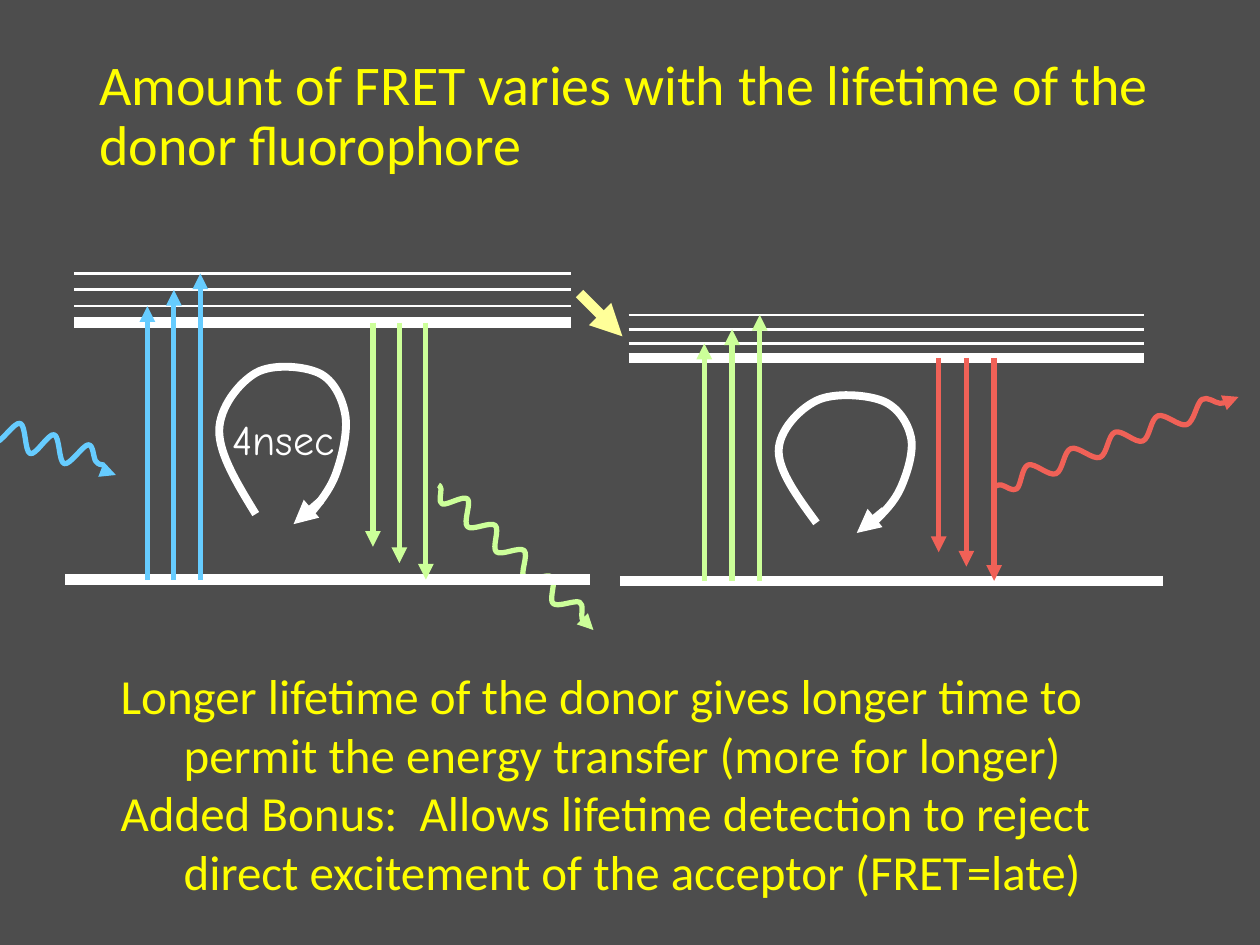
import pptx
import pptx.util
import pptx.dml.color
import pptx.enum.shapes
import pptx.enum.text
import pptx.oxml.ns
from dataclasses import dataclass
from typing import Optional
from lxml import etree

Point = tuple[float, float]
Anchor = pptx.enum.text.MSO_ANCHOR
Align = pptx.enum.text.PP_ALIGN
qn = pptx.oxml.ns.qn


@dataclass(frozen=True)
class Theme:
    back: str = "4D4D4D"
    white: str = "FFFFFF"
    text: str = "FFFF00"
    blue: str = "66CCFF"
    green: str = "CCFF99"
    red: str = "F06157"
    cream: str = "FFFF99"
    font: str = "Calibri"
    hand: str = "Comic Neue"
    title: float = 32
    body: float = 28
    label: float = 24
    thin: float = 1.5
    ray: float = 3
    loop: float = 4.5
    thick: float = 6


@dataclass(frozen=True)
class Scheme:
    ground: tuple[float, float, float]
    band: tuple[float, float]
    low: float
    top: float
    rise: float
    fall: float
    pitch: float
    up: str
    down: str


@dataclass(frozen=True)
class Curve:
    points: list[Point]
    tip: tuple[Point, Point]
    tint: str
    width: float


@dataclass(frozen=True)
class Label:
    box: tuple[float, float, float, float]
    lines: list[str]
    size: float
    font: str
    tint: str
    hang: float = 0
    space: Optional[float] = None
    centre: bool = False


THEME = Theme()

DONOR = Scheme((0.52, 4.68, 4.6), (0.59, 4.53), 2.56, 2.17, 1.17, 2.96, 0.21, THEME.blue, THEME.green)
TAKER = Scheme((4.92, 9.23, 4.61), (4.99, 9.08), 2.84, 2.5, 5.59, 7.45, 0.22, THEME.green, THEME.red)

GREEN_WAVE = Curve(
    [(3.48, 3.85), (3.5, 3.88), (3.51, 4), (3.71, 3.96), (3.71, 4.18), (3.93, 4.17), (3.94, 4.38),
     (4.16, 4.37), (4.16, 4.59), (4.38, 4.58), (4.39, 4.79), (4.6, 4.78), (4.62, 4.91), (4.67, 4.96)],
    ((4.65, 4.94), (4.71, 5)), THEME.green, THEME.ray)
BLUE_WAVE = Curve(
    [(-0.63, 3.22), (-0.6, 3.24), (-0.55, 3.36), (-0.38, 3.2), (-0.31, 3.43), (-0.11, 3.28),
     (-0.04, 3.51), (0.16, 3.36), (0.24, 3.6), (0.43, 3.45), (0.51, 3.68), (0.7, 3.53),
     (0.76, 3.66), (0.82, 3.69)],
    ((0.84, 3.74), (0.92, 3.77)), THEME.blue, THEME.ray)
RED_WAVE = Curve(
    [(7.9, 3.86), (7.95, 3.85), (8.07, 3.88), (8.16, 3.69), (8.38, 3.76), (8.5, 3.56), (8.73, 3.63),
     (8.85, 3.43), (9.07, 3.5), (9.19, 3.3), (9.42, 3.37), (9.54, 3.17), (9.68, 3.2), (9.76, 3.18)],
    ((9.73, 3.19), (9.83, 3.15)), THEME.red, THEME.ray)
DONOR_LOOP = Curve(
    [(2.03, 4.08), (1.74, 3.42), (2.03, 2.96), (2.53, 2.96), (2.74, 3.29), (2.67, 3.75), (2.46, 4.08)],
    ((2.55, 3.97), (2.33, 4.16)), THEME.white, THEME.loop)
TAKER_LOOP = Curve(
    [(6.48, 4.15), (6.18, 3.58), (6.48, 3.18), (7, 3.18), (7.23, 3.47), (7.15, 3.87), (6.93, 4.15)],
    ((7.02, 4.05), (6.8, 4.23)), THEME.white, THEME.loop)

LABELS = [
    Label((1.7, 3.2, 1.1, 0.57), ["4nsec"], THEME.label, THEME.hand, THEME.white, centre=True),
    Label((0.86, 5.23, 8.5, 1.99),
          ["Longer lifetime of the donor gives longer time to permit the energy transfer (more for longer)",
           "Added Bonus:  Allows lifetime detection to reject direct excitement of the acceptor (FRET=late)"],
          THEME.body, THEME.font, THEME.text, hang=0.5),
    Label((0.69, 0.4, 8.62, 1.45), ["Amount of FRET varies with the lifetime of the donor fluorophore"],
          THEME.title, THEME.font, THEME.text, space=0.9),
]


def span(inch: float) -> int:
    return pptx.util.Cm(inch * 2.54)


def shade(tint: str) -> pptx.dml.color.RGBColor:
    return pptx.dml.color.RGBColor.from_string(tint)


def stroke(shape, tint: str, width: float) -> None:
    shape.line.color.rgb = shade(tint)
    shape.line.width = pptx.util.Pt(width)


def draw_line(slide, start: Point, end: Point, tint: str, width: float, head: bool = False) -> None:
    ends = [span(value) for value in (*start, *end)]
    line = slide.shapes.add_connector(pptx.enum.shapes.MSO_CONNECTOR.STRAIGHT, *ends)
    stroke(line, tint, width)
    if head:
        etree.SubElement(line.line._get_or_add_ln(), qn("a:tailEnd"), type="triangle")
    etree.SubElement(line._element.spPr, qn("a:effectLst"))


def bend(shape) -> None:
    spots = [(int(p.get("x")), int(p.get("y"))) for p in shape._element.iter(qn("a:pt"))]
    last = len(spots) - 1

    def pull(i: int, sign: int) -> Point:
        return tuple(p + sign * (b - a) / 6 for a, p, b in zip(spots[i - 1], spots[i], spots[i + 1]))

    def half(a: Point, b: Point) -> Point:
        return tuple((m + n) / 2 for m, n in zip(a, b))

    for i, part in enumerate(list(shape._element.iter(qn("a:lnTo")))):
        first = pull(i, 1) if i else half(spots[0], pull(1, -1))
        second = pull(i + 1, -1) if i + 1 < last else half(spots[last], first)
        part.tag = qn("a:cubicBezTo")
        for place, (x, y) in enumerate((first, second)):
            spot = etree.SubElement(part, qn("a:pt"), x=str(round(x)), y=str(round(y)))
            part.insert(place, spot)


def draw_curve(slide, curve: Curve) -> None:
    spots = [(span(x), span(y)) for x, y in curve.points]
    pen = slide.shapes.build_freeform(*spots[0])
    pen.add_line_segments(spots[1:], close=False)
    shape = pen.convert_to_shape()
    shape.shadow.inherit = False
    shape.fill.background()
    stroke(shape, curve.tint, curve.width)
    bend(shape)
    draw_line(slide, *curve.tip, curve.tint, curve.width, True)


def draw_scheme(slide, scheme: Scheme) -> None:
    left, right, floor = scheme.ground
    draw_line(slide, (left, floor), (right, floor), THEME.white, THEME.thick)
    gap = (scheme.low - scheme.top) / 3
    levels = [scheme.low - gap * i for i in range(4)]
    for i, y in enumerate(levels):
        draw_line(slide, (scheme.band[0], y), (scheme.band[1], y), THEME.white,
                  THEME.thin if i else THEME.thick)
    for i, y in enumerate(levels[1:]):
        x = scheme.rise + scheme.pitch * i
        draw_line(slide, (x, floor), (x, y), scheme.up, THEME.ray, True)
    for i in range(3):
        x = scheme.fall + scheme.pitch * i
        draw_line(slide, (x, scheme.low), (x, floor - gap * (2 - i)), scheme.down, THEME.ray, True)


def draw_label(slide, label: Label) -> None:
    frame = slide.shapes.add_textbox(*map(span, label.box)).text_frame
    frame.word_wrap = not label.centre
    frame.vertical_anchor = Anchor.MIDDLE if label.centre else Anchor.TOP
    for i, line in enumerate(label.lines):
        para = frame.add_paragraph() if i else frame.paragraphs[0]
        para.alignment = Align.CENTER if label.centre else Align.LEFT
        if label.space:
            para.line_spacing = label.space
        if label.hang:
            props = para._p.get_or_add_pPr()
            props.set("marL", str(span(label.hang)))
            props.set("indent", str(-span(label.hang)))
        run = para.add_run()
        run.text = line
        run.font.name = label.font
        run.font.size = pptx.util.Pt(label.size)
        run.font.color.rgb = shade(label.tint)


def main() -> None:
    deck = pptx.Presentation()
    deck.slide_width, deck.slide_height = span(10), span(7.5)
    slide = deck.slides.add_slide(deck.slide_layouts[6])
    slide.background.fill.solid()
    slide.background.fill.fore_color.rgb = shade(THEME.back)
    draw_curve(slide, GREEN_WAVE)
    draw_curve(slide, BLUE_WAVE)
    for scheme in (DONOR, TAKER):
        draw_scheme(slide, scheme)
    for curve in (DONOR_LOOP, RED_WAVE, TAKER_LOOP):
        draw_curve(slide, curve)
    draw_line(slide, (4.6, 2.33), (4.94, 2.67), THEME.cream, THEME.thick, True)
    for label in LABELS:
        draw_label(slide, label)
    deck.save("out.pptx")


if __name__ == "__main__":
    main()
